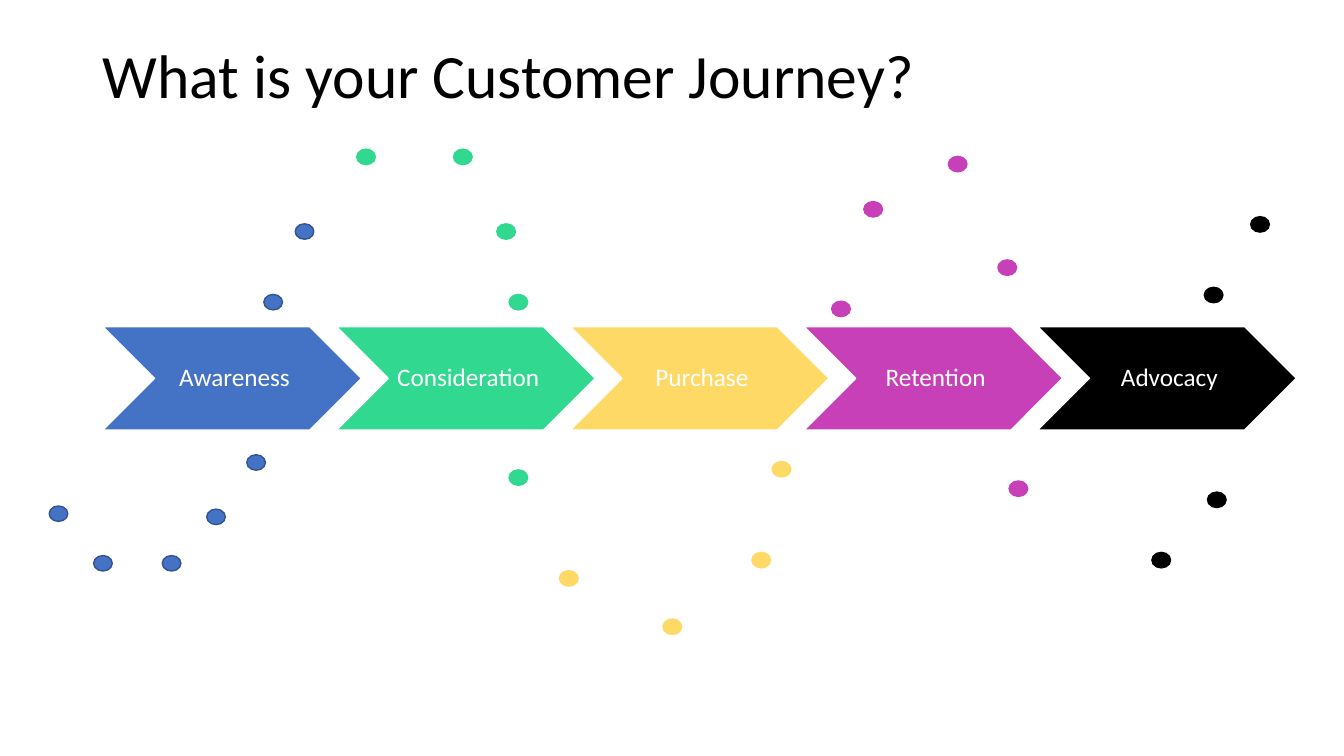
"""Builds a customer journey slide: five chevron stages with a trail of dots."""
from dataclasses import dataclass

from pptx import Presentation
from pptx.dml.color import RGBColor
from pptx.enum.shapes import MSO_SHAPE as Preset
from pptx.enum.text import MSO_ANCHOR as Anchor, PP_ALIGN as Align
from pptx.shapes.autoshape import Shape
from pptx.slide import Slide
from pptx.text.text import TextFrame
from pptx.util import Cm, Pt

STAGE_LEFT, STAGE_TOP, STAGE_PITCH = 2.59, 8.23, 5.89
STAGE_WIDTH, STAGE_HEIGHT = 6.52, 2.61
DOT_WIDTH, DOT_HEIGHT = 0.47, 0.39
TITLE_BOX = {"left": 2.34, "top": 1.02, "width": 29.21, "height": 3.68}
STAGE_FRAME = {
    "margin_left": Cm(0.2), "margin_right": Cm(0.08), "margin_top": Cm(0.08),
    "margin_bottom": Cm(0.08), "vertical_anchor": Anchor.MIDDLE, "word_wrap": False,
}
TITLE_FRAME = {
    "margin_left": Cm(0.25), "margin_right": Cm(0.25), "margin_top": Cm(0.13),
    "margin_bottom": Cm(0.13), "vertical_anchor": Anchor.TOP, "word_wrap": True,
}


@dataclass(frozen=True)
class Stage:
    name: str
    fill: str
    dot_line: str
    dots: tuple[tuple[float, float], ...]


STAGES = (
    Stage("Awareness", "4472C4", "325491", (
        (1.24, 12.75), (2.36, 14), (4.09, 14), (5.21, 12.83),
        (6.22, 11.46), (6.65, 7.42), (7.44, 5.64))),
    Stage("Consideration", "30D890", "30D890", (
        (8.99, 3.76), (11.43, 3.76), (12.52, 5.64), (12.83, 7.42), (12.83, 11.84))),
    Stage("Purchase", "FFD966", "FFD966", (
        (14.1, 14.38), (16.71, 15.6), (18.95, 13.92), (19.46, 11.63))),
    Stage("Retention", "C840B8", "C840B8", (
        (20.96, 7.59), (21.77, 5.08), (23.9, 3.94), (25.15, 6.55), (25.43, 12.12))),
    Stage("Advocacy", "000000", "000000", (
        (29.03, 13.92), (30.35, 7.24), (31.52, 5.46), (30.43, 12.4))),
)


def color(value: str) -> RGBColor:
    return RGBColor.from_string(value)


def write(frame: TextFrame, text: str, size: int, ink: str, align: Align, layout: dict) -> None:
    for name, value in layout.items():
        setattr(frame, name, value)
    paragraph = frame.paragraphs[0]
    paragraph.alignment = align
    paragraph.line_spacing = 0.9
    run = paragraph.add_run()
    run.text = text
    for name, value in {"name": "Calibri", "size": Pt(size), "bold": False}.items():
        setattr(run.font, name, value)
    run.font.color.rgb = color(ink)


def add_filled(slide: Slide, preset: Preset, box: tuple[float, float, float, float],
               fill: str, line: str) -> Shape:
    shape = slide.shapes.add_shape(preset, *map(Cm, box))
    shape.shadow.inherit = False
    shape.fill.solid()
    shape.fill.fore_color.rgb = color(fill)
    shape.line.color.rgb = color(line)
    shape.line.width = Pt(1)
    return shape


def add_chevron(slide: Slide, stage: Stage, index: int) -> None:
    left = STAGE_LEFT + index * STAGE_PITCH
    chevron = add_filled(slide, Preset.CHEVRON, (left, STAGE_TOP, STAGE_WIDTH, STAGE_HEIGHT),
                         stage.fill, "FFFFFF")
    write(chevron.text_frame, stage.name, 18, "FFFFFF", Align.CENTER, STAGE_FRAME)


def add_dots(slide: Slide, stage: Stage) -> None:
    for left, top in stage.dots:
        add_filled(slide, Preset.FLOWCHART_CONNECTOR, (left, top, DOT_WIDTH, DOT_HEIGHT),
                   stage.fill, stage.dot_line)


def main() -> None:
    presentation = Presentation()
    presentation.slide_width, presentation.slide_height = Cm(33.87), Cm(19.05)
    slide = presentation.slides.add_slide(presentation.slide_layouts.get_by_name("Title Only"))
    title = slide.shapes.title
    for name, value in TITLE_BOX.items():
        setattr(title, name, Cm(value))
    write(title.text_frame, "What is your Customer Journey?", 44, "000000",
          Align.LEFT, TITLE_FRAME)
    for index, stage in enumerate(STAGES):
        add_chevron(slide, stage, index)
    for stage in STAGES:
        add_dots(slide, stage)
    presentation.save("out.pptx")


if __name__ == "__main__":
    main()
